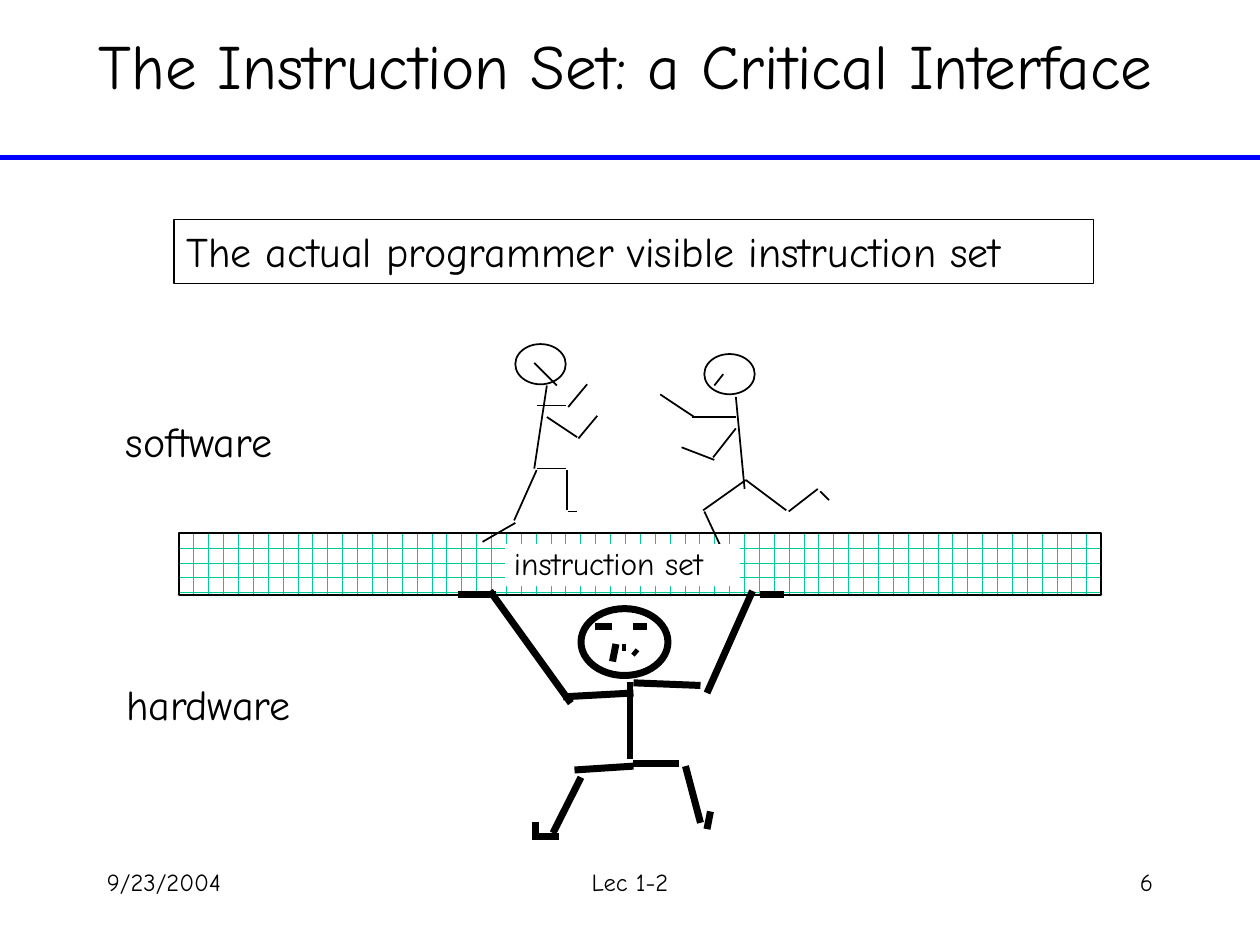
from dataclasses import dataclass
from lxml import etree
from pptx import Presentation
from pptx import util as u
from pptx.dml import color
from pptx.enum import dml, shapes, text
from pptx.oxml import ns

Pt = u.Pt
FONT = "Comic Neue"
HUES = {"ink": "000000", "rule": "0000FF", "brick": "00CC99", "paper": "FFFFFF"}
ALIGN = text.PP_ALIGN
SIDES = (7.2, 3.6)
SNUG = (5, 2)


@dataclass
class Label:
    words: str
    box: tuple
    size: float
    align: ALIGN = ALIGN.LEFT
    pads: tuple = SIDES
    lead: float = 1.0
    edge: float = 0
    fill: str = ""


@dataclass
class Figure:
    head: tuple
    width: float
    limbs: list


def hue(name: str) -> color.RGBColor:
    return color.RGBColor.from_string(HUES[name])


def style(frame, label: Label) -> None:
    frame.text = label.words
    frame.word_wrap = True
    frame.auto_size = text.MSO_AUTO_SIZE.NONE
    frame.vertical_anchor = text.MSO_ANCHOR.TOP
    frame.margin_left = frame.margin_right = Pt(label.pads[0])
    frame.margin_top = frame.margin_bottom = Pt(label.pads[1])
    para = frame.paragraphs[0]
    para.alignment = label.align
    para.line_spacing = label.lead
    font = para.runs[0].font
    font.name, font.size = FONT, Pt(label.size)
    font.color.rgb = hue("ink")


def form(tree, kind, box: tuple, edge: float):
    shape = tree.add_shape(kind, *map(Pt, box))
    shape.shadow.inherit = False
    shape.fill.background()
    if edge:
        shape.line.color.rgb = hue("ink")
        shape.line.width = Pt(edge)
    else:
        shape.line.fill.background()
    return shape


def write(tree, label: Label) -> None:
    if label.edge or label.fill:
        shape = form(tree, shapes.MSO_SHAPE.RECTANGLE, label.box, label.edge)
        if label.fill:
            shape.fill.solid()
            shape.fill.fore_color.rgb = hue(label.fill)
    else:
        shape = tree.add_textbox(*map(Pt, label.box))
    style(shape.text_frame, label)


def stroke(tree, ends: tuple, width: float, tint: str = "ink") -> None:
    line = tree.add_connector(shapes.MSO_CONNECTOR.STRAIGHT, *map(Pt, ends))
    line.line.color.rgb = hue(tint)
    line.line.width = Pt(width)
    etree.SubElement(line._element.spPr, ns.qn("a:effectLst"))


def draw(tree, man: Figure) -> None:
    group = tree.add_group_shape().shapes
    form(group, shapes.MSO_SHAPE.OVAL, man.head, man.width)
    for limb in man.limbs:
        stroke(group, limb, man.width)


TITLE = Label("The Instruction Set: a Critical Interface",
              (-111, 13, 937, 35), 36, ALIGN.CENTER, SNUG)
FOOT = [
    Label("9/23/2004", (54, 492, 150, 36), 14),
    Label("Lec 1-2", (246, 492, 228, 36), 14, ALIGN.CENTER),
    Label("6", (516, 492, 150, 36), 14, ALIGN.RIGHT),
]
NOTES = [
    Label("instruction set", (288.7, 311, 134, 24), 18,
          pads=SNUG, lead=0.92, fill="paper"),
    Label("software", (67, 240, 111, 29), 24, pads=SNUG, lead=0.85),
    Label("hardware", (67, 390, 115, 29), 24, pads=SNUG, lead=0.85),
    Label("The actual programmer visible instruction set",
          (99.4, 125.3, 525.6, 36.7), 24, edge=0.75),
]
MEN = [
    Figure((294.5, 196.6, 28.8, 23), 1, [
        (312.5, 220.3, 305.3, 267.8), (306.7, 267.8, 323.3, 267.8),
        (324, 268.6, 324, 291.6), (324.7, 292.3, 329.8, 292.3),
        (306.7, 268.6, 293.8, 297.4), (294.5, 298.8, 275.8, 309.6),
        (312.5, 238.3, 329.8, 249.8), (330.5, 250.6, 341.3, 237.6),
        (306.7, 231.8, 323.3, 231.8), (324.7, 232.6, 335.5, 219.6),
        (318.2, 220.3, 305.3, 207.4),
    ]),
    Figure((402.5, 202.3, 28.8, 23), 1, [
        (420.5, 226.8, 425.5, 279.4), (426.2, 274.3, 401.8, 291.6),
        (402.5, 292.3, 413.3, 315.4), (426.2, 274.3, 449.3, 291.6),
        (450.7, 292.3, 467.3, 279.4), (468.7, 280.8, 473.8, 285.8),
        (420.5, 244.8, 407.5, 261.4), (408.2, 262.8, 389.5, 255.6),
        (420.5, 238.3, 395.3, 238.3), (396.7, 238.3, 377.3, 225.4),
        (408.2, 220.3, 413.3, 213.8),
    ]),
    Figure((332, 347.8, 49.7, 38.2), 4, [
        (350, 378, 352, 368), (355.7, 370, 357.8, 370),
        (362, 372, 364, 373.7), (362, 358, 370, 358),
        (350, 358, 340, 358), (306, 480, 306, 470),
        (360, 390, 360, 434), (362, 436.3, 388, 436.3),
        (391.7, 437.8, 400.3, 470.2), (404, 473.8, 406, 463.7),
        (362, 437.8, 328.3, 440), (332, 444.2, 316, 476),
        (319.7, 478, 303.8, 478), (362, 390.2, 400.3, 391.7),
        (404, 396, 430, 337.7), (434.2, 340, 447.8, 340),
        (362, 396, 321.8, 398.2), (326.2, 401.8, 280, 337.7),
        (283.7, 340, 262, 340),
    ]),
]


def main() -> None:
    deck = Presentation()
    deck.slide_width, deck.slide_height = Pt(720), Pt(540)
    slide = deck.slides.add_slide(deck.slide_layouts[5])
    tree = slide.shapes
    title = tree.title
    title.left, title.top, title.width, title.height = map(Pt, TITLE.box)
    style(title.text_frame, TITLE)
    stroke(tree, (0, 90, 720, 90), 3, "rule")
    for label in FOOT:
        write(tree, label)
    wall = form(tree, shapes.MSO_SHAPE.RECTANGLE, (102.2, 304.6, 527, 35.3), 1)
    wall.fill.patterned()
    wall.fill.pattern = dml.MSO_PATTERN.HORIZONTAL_BRICK
    wall.fill.fore_color.rgb = hue("brick")
    wall.fill.back_color.rgb = hue("paper")
    for man in MEN:
        draw(tree, man)
    for label in NOTES:
        write(tree, label)
    deck.save("out.pptx")


if __name__ == "__main__":
    main()
